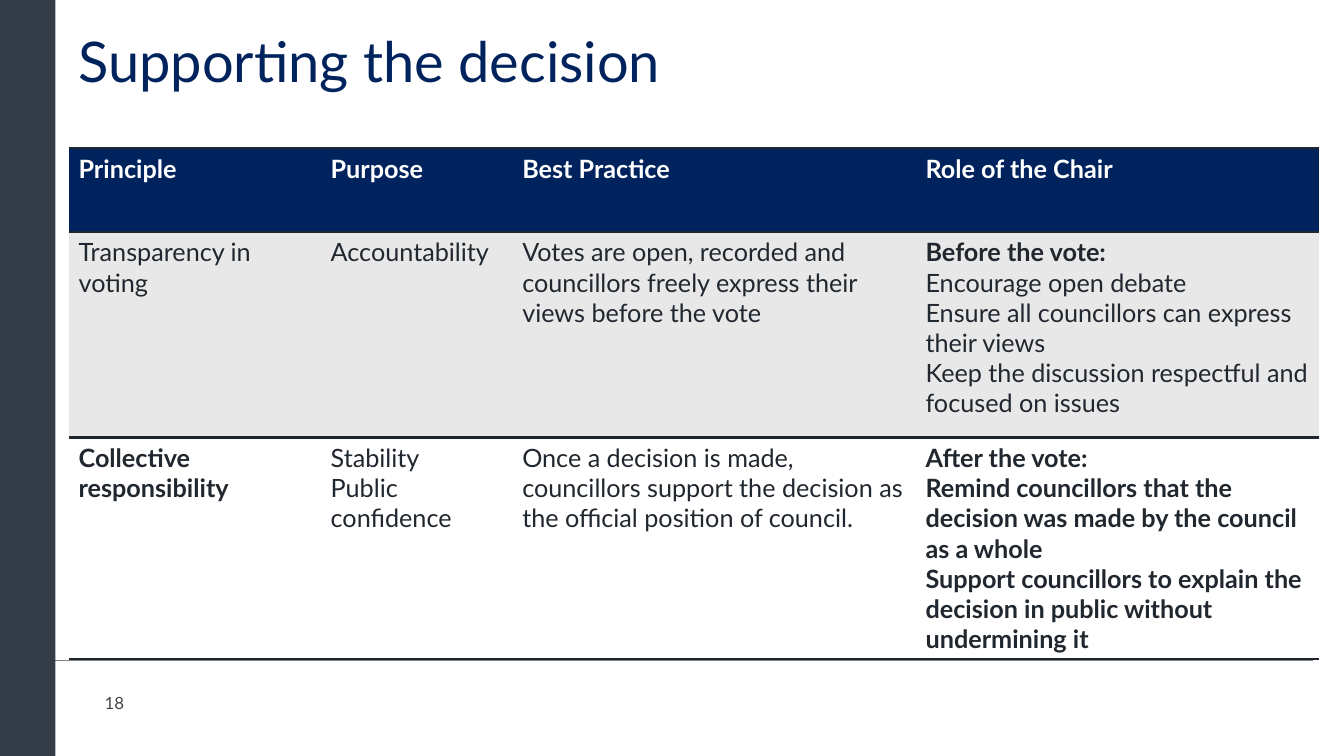
from lxml import etree
from pptx import Presentation
from pptx.dml.color import RGBColor
from pptx.enum.shapes import MSO_CONNECTOR, MSO_SHAPE
from pptx.enum.text import MSO_ANCHOR
from pptx.oxml.ns import qn
from pptx.util import Inches, Pt

STRAIGHT = MSO_CONNECTOR.STRAIGHT
RECTANGLE = MSO_SHAPE.RECTANGLE
MIDDLE, TOP = MSO_ANCHOR.MIDDLE, MSO_ANCHOR.TOP

FONT = "Lato"
COLORS = {
    "navy": "00235D", "slate": "333C47", "ink": "21272E", "band": "E8E8E8",
    "white": "FFFFFF", "rule": "808080", "number": "454347",
}
PLAIN_STYLE = "{2D5ABB26-0587-4C30-8999-92F81FD0307C}"
SLIDE_WIDTH, SLIDE_HEIGHT = 13.33, 7.5
LEFT = 0.68
COLUMN_WIDTHS = [2.5, 1.9, 4, 4]
ROW_HEIGHTS = [0.83, 2.04, 2.2]

# Each cell is a list of paragraphs; a leading * marks a bold one
ROWS = [
    [["*Principle"], ["*Purpose"], ["*Best Practice"], ["*Role of the Chair"]],
    [
        ["Transparency in voting"],
        ["Accountability"],
        ["Votes are open, recorded and councillors freely express their views before the vote"],
        ["*Before the vote:", "Encourage open debate",
         "Ensure all councillors can express their views",
         "Keep the discussion respectful and focused on issues"],
    ],
    [
        ["*Collective responsibility"],
        ["Stability", "Public confidence"],
        ["Once a decision is made, councillors support the decision as the official position of council."],
        ["*After the vote:",
         "*Remind councillors that the decision was made by the council as a whole",
         "*Support councillors to explain the decision in public without undermining it"],
    ],
]
# Fill, text colour and ruled edges of each row
ROW_LOOKS = [
    ("navy", "white", ("lnT", "lnB")),
    ("band", "ink", ("lnT",)),
    ("white", "ink", ("lnB",)),
]


def color(name):
    return RGBColor.from_string(COLORS[name])


def style_font(font, size, color_name, bold=False):
    font.name = FONT
    font.size = Pt(size)
    font.bold = bold
    font.color.rgb = color(color_name)


def add_text(slide, box, text, size, color_name, anchor=TOP):
    shape = slide.shapes.add_textbox(*map(Inches, box))
    frame = shape.text_frame
    frame.word_wrap = True
    frame.vertical_anchor = anchor
    frame.text = text
    paragraph = frame.paragraphs[0]
    style_font(paragraph.runs[0].font, size, color_name)
    return paragraph


def add_frame(slide, width, height):
    # Rule above the footer
    rule_y = Inches(6.55)
    rule = slide.shapes.add_connector(STRAIGHT, Inches(0.37), rule_y, Inches(width - 0.31), rule_y)
    rule.line.color.rgb = color("rule")
    rule.line.width = Pt(1)
    etree.SubElement(rule._element.spPr, qn("a:effectLst"))
    # Slide number
    add_text(slide, (0.94, 6.82, 0.55, 0.3), "18", 12, "number")
    # Side bar
    bar = slide.shapes.add_shape(RECTANGLE, 0, 0, Inches(0.55), Inches(height))
    bar.shadow.inherit = False
    bar.fill.solid()
    bar.fill.fore_color.rgb = color("slate")
    bar.line.fill.background()


def add_title(slide, box, text):
    paragraph = add_text(slide, box, text, 40, "navy", MIDDLE)
    paragraph.line_spacing = Pt(43.7)
    paragraph.space_after = Pt(14.6)


def add_border(cell, edge):
    properties = cell._tc.get_or_add_tcPr()
    line = etree.SubElement(properties, qn(f"a:{edge}"), w=str(Pt(2)))
    fill = etree.SubElement(line, qn("a:solidFill"))
    etree.SubElement(fill, qn("a:srgbClr"), val=COLORS["ink"])


def fill_cell(cell, texts, look):
    fill_name, text_color, edges = look
    for edge in edges:
        add_border(cell, edge)
    cell.fill.solid()
    cell.fill.fore_color.rgb = color(fill_name)
    cell.text_frame.text = "\n".join(text.lstrip("*") for text in texts)
    for paragraph, text in zip(cell.text_frame.paragraphs, texts):
        style_font(paragraph.runs[0].font, 18, text_color, text.startswith("*"))


def add_principles_table(slide, left, top):
    box = (left, top, sum(COLUMN_WIDTHS), sum(ROW_HEIGHTS))
    frame = slide.shapes.add_table(len(ROWS), len(COLUMN_WIDTHS), *map(Inches, box))
    table = frame.table
    table.horz_banding = False
    table._tbl.tblPr.find(qn("a:tableStyleId")).text = PLAIN_STYLE
    for column, width in zip(table.columns, COLUMN_WIDTHS):
        column.width = Inches(width)
    for row, height, contents, look in zip(table.rows, ROW_HEIGHTS, ROWS, ROW_LOOKS):
        row.height = Inches(height)
        for cell, texts in zip(row.cells, contents):
            fill_cell(cell, texts, look)


def main():
    presentation = Presentation()
    presentation.slide_width = Inches(SLIDE_WIDTH)
    presentation.slide_height = Inches(SLIDE_HEIGHT)
    slide = presentation.slides.add_slide(presentation.slide_layouts[6])
    add_frame(slide, SLIDE_WIDTH, SLIDE_HEIGHT)
    add_title(slide, (LEFT, 0.23, 8.8, 0.79), "Supporting the decision")
    add_principles_table(slide, LEFT, 1.47)
    presentation.save("out.pptx")


if __name__ == "__main__":
    main()
